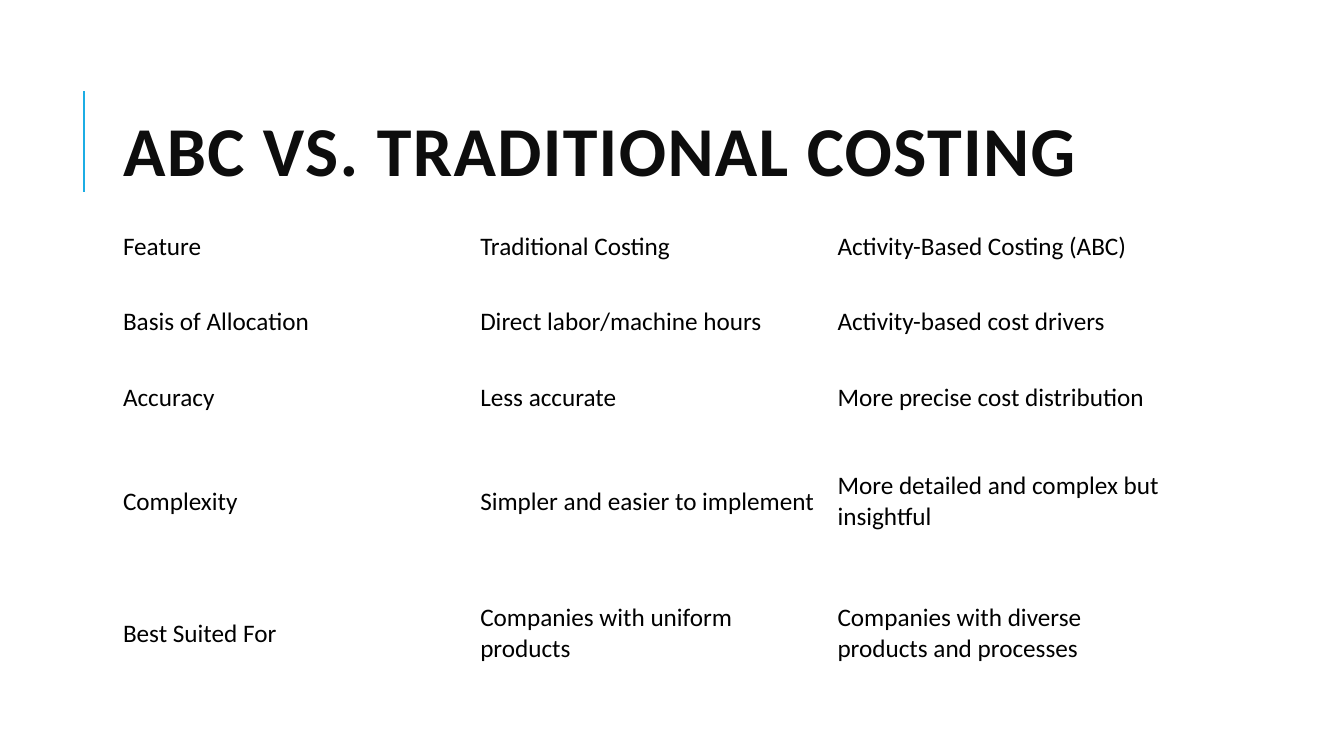
from lxml import etree
from pptx import Presentation
from pptx.dml.color import RGBColor
from pptx.enum import shapes, text
from pptx.oxml.ns import qn
from pptx.util import Inches, Pt

FONT = "Calibri"
ACCENT = RGBColor(0x1C, 0xAD, 0xE4)
TITLE_COLOR = RGBColor(0x0D, 0x0D, 0x0D)
BLACK = RGBColor(0, 0, 0)

LEFT = Inches(1.12)
WIDTH = Inches(10.63)
ROW_HEIGHTS = (0.75, 0.75, 0.75, 1.31, 1.31)
COMPARISON = (
    ("Feature", "Traditional Costing", "Activity-Based Costing (ABC)"),
    ("Basis of Allocation", "Direct labor/machine hours", "Activity-based cost drivers"),
    ("Accuracy", "Less accurate", "More precise cost distribution"),
    ("Complexity", "Simpler and easier to implement",
     "More detailed and complex but insightful"),
    ("Best Suited For", "Companies with uniform products",
     "Companies with diverse products and processes"),
)


def write_text(frame, words, size=18, color=BLACK, bold=False, line_spacing=1.0, tracking=None):
    frame.word_wrap = True
    paragraph = frame.paragraphs[0]
    paragraph.alignment = text.PP_ALIGN.LEFT
    paragraph.line_spacing = line_spacing
    run = paragraph.add_run()
    run.text = words
    run.font.name = FONT
    run.font.size = Pt(size)
    run.font.bold = bold
    run.font.color.rgb = color
    if tracking is not None:
        run.font._element.set("spc", str(tracking * 100))


def add_accent_line(slide):
    x = Inches(0.83)
    line = slide.shapes.add_connector(
        shapes.MSO_CONNECTOR.STRAIGHT, x, Inches(1.9), x, Inches(0.9))
    line.line.color.rgb = ACCENT
    line.line.width = Pt(1.5)
    etree.SubElement(line._element.spPr, qn("a:effectLst"))


def format_title(slide, words):
    title = slide.shapes.title
    title.left, title.top = LEFT, Inches(1.03)
    title.width, title.height = WIDTH, Inches(1.04)
    frame = title.text_frame
    frame.auto_size = text.MSO_AUTO_SIZE.NONE
    frame.vertical_anchor = text.MSO_ANCHOR.MIDDLE
    write_text(frame, words, size=50, color=TITLE_COLOR, bold=True,
               line_spacing=0.8, tracking=1)


def add_comparison_table(slide, rows):
    table = slide.shapes.add_table(
        len(rows), len(rows[0]), LEFT, Inches(2.07), WIDTH, Inches(sum(ROW_HEIGHTS))).table
    table.first_row = False
    table.horz_banding = False
    for row, height, entries in zip(table.rows, ROW_HEIGHTS, rows):
        row.height = Inches(height)
        for cell, words in zip(row.cells, entries):
            cell.fill.background()
            cell.vertical_anchor = text.MSO_ANCHOR.MIDDLE
            write_text(cell.text_frame, words)


def main():
    presentation = Presentation()
    presentation.slide_width = Inches(13.33)
    presentation.slide_height = Inches(7.5)
    slide = presentation.slides.add_slide(presentation.slide_layouts.get_by_name("Title Only"))
    add_accent_line(slide)
    format_title(slide, "ABC VS. TRADITIONAL COSTING")
    add_comparison_table(slide, COMPARISON)
    presentation.save("out.pptx")


if __name__ == "__main__":
    main()
